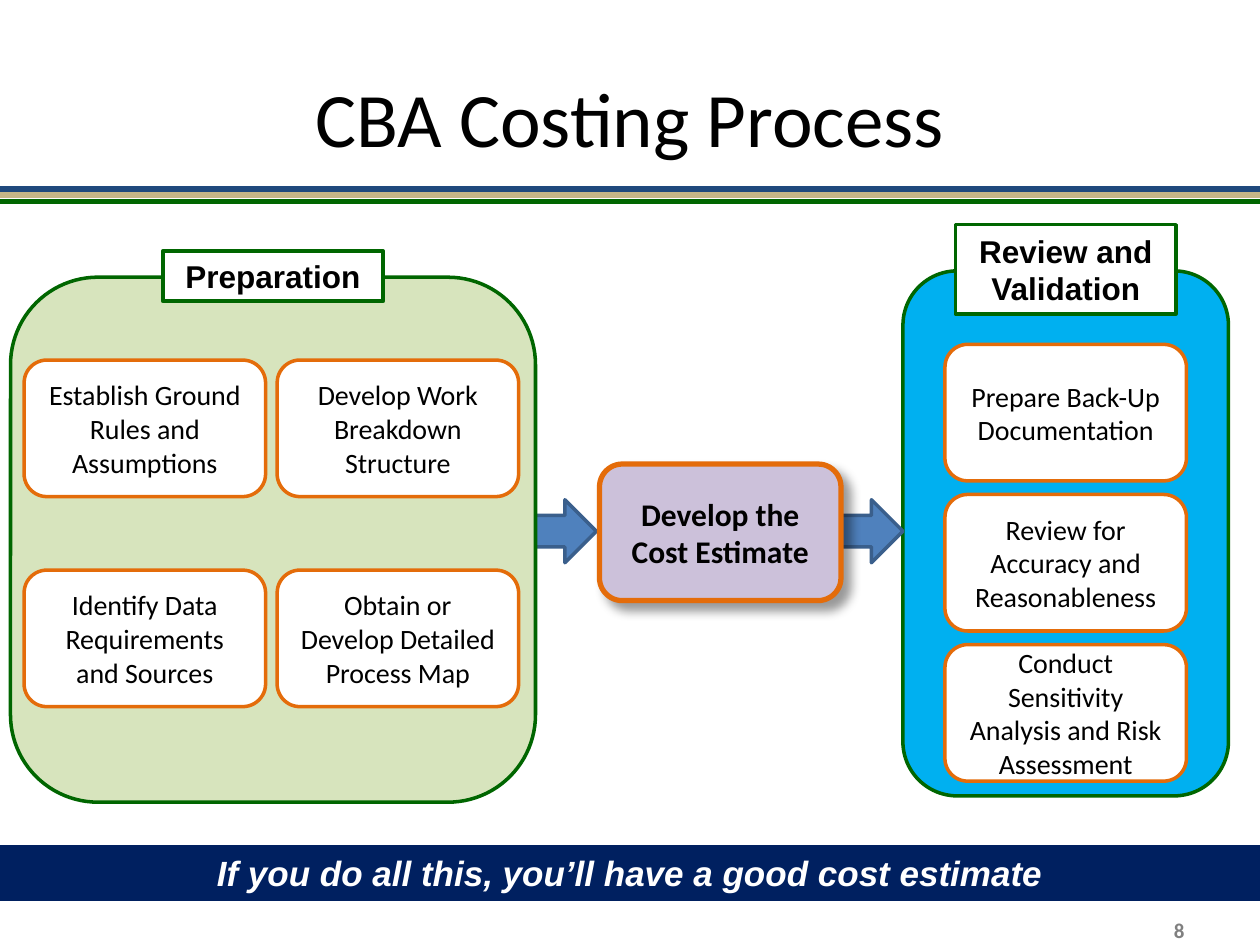
from dataclasses import dataclass

from lxml.etree import SubElement as Sub
from pptx import Presentation
from pptx.dml.color import RGBColor
from pptx.enum.shapes import MSO_CONNECTOR as Wire, MSO_SHAPE as Kind
from pptx.enum.text import MSO_ANCHOR as Anchor, PP_ALIGN as Align
from pptx.oxml.ns import qn
from pptx.util import Inches, Pt

# Grid of 120 columns by 90 rows on a 10 by 7.5 inch slide
WIDE, HIGH = Inches(10), Inches(7.5)
COLS, ROWS = 120, 90

BLACK, WHITE, GREY = "000000", "FFFFFF", "808080"
GREEN, TAN, BLUE, NAVY = "006600", "C6B687", "1F497D", "002060"
ORANGE = "E46C0A"


@dataclass
class Area:
    col: float
    row: float
    cols: float
    rows: float

    def place(self) -> tuple[int, int, int, int]:
        return (int(self.col * WIDE / COLS), int(self.row * HIGH / ROWS),
                int(self.cols * WIDE / COLS), int(self.rows * HIGH / ROWS))


@dataclass
class Font:
    name: str
    size: float
    color: str = BLACK
    bold: bool = False
    slant: bool = False


@dataclass
class Look:
    kind: Kind
    fill: str
    edge: str = ""
    width: float = 2


BODY = Font("Calibri", 16)
HEAD = Font("Arial", 18, bold=True)
STEP = Look(Kind.ROUNDED_RECTANGLE, WHITE, ORANGE)
LABEL = Look(Kind.RECTANGLE, WHITE, GREEN)
ARROW = Look(Kind.RIGHT_ARROW, "4F81BD", "3A5F8C")


def rgb(color: str) -> RGBColor:
    return RGBColor.from_string(color)


def write(shape, text: str, font: Font, align=Align.CENTER, anchor=Anchor.MIDDLE):
    frame = shape.text_frame
    frame.word_wrap = True
    frame.vertical_anchor = anchor
    para = frame.paragraphs[0]
    para.text = text
    para.alignment = align
    style = para.font
    style.name, style.size = font.name, Pt(font.size)
    style.bold, style.italic = font.bold, font.slant
    style.color.rgb = rgb(font.color)


def draw(slide, area: Area, look: Look):
    shape = slide.shapes.add_shape(look.kind, *area.place())
    shape.shadow.inherit = False
    shape.fill.solid()
    shape.fill.fore_color.rgb = rgb(look.fill)
    if look.edge:
        shape.line.color.rgb = rgb(look.edge)
        shape.line.width = Pt(look.width)
    else:
        shape.line.fill.background()
    return shape


def step(slide, col: float, row: float, text: str, look: Look = STEP, font: Font = BODY):
    shape = draw(slide, Area(col, row, 23, 13), look)
    write(shape, text, font)
    return shape


def note(slide, area: Area, text: str, font: Font, align=Align.CENTER) -> None:
    write(slide.shapes.add_textbox(*area.place()), text, font, align)


def rule(slide, row: float, color: str) -> None:
    y = int(row * HIGH / ROWS)
    line = slide.shapes.add_connector(Wire.STRAIGHT, 0, y, WIDE, y)
    line.line.color.rgb = rgb(color)
    line.line.width = Pt(3.25)
    Sub(line._element.spPr, qn("a:effectLst"))


def shade(shape) -> None:
    """Soft shadow to the lower right."""
    glow = shape._element.spPr.find(qn("a:effectLst"))
    cast = Sub(glow, qn("a:outerShdw"), blurRad=str(Pt(6)), dist=str(Pt(6)),
               dir=str(45 * 60000), algn="tl", rotWithShape="0")
    tint = Sub(cast, qn("a:srgbClr"), val=BLACK)
    Sub(tint, qn("a:alpha"), val="40000")


def main() -> None:
    deck = Presentation()
    deck.slide_width, deck.slide_height = WIDE, HIGH
    slide = deck.slides.add_slide(deck.slide_layouts[6])

    # Title, its three rules and the page number
    for i, color in enumerate((GREEN, TAN, BLUE)):
        rule(slide, 19.2 - 0.6 * i, color)
    note(slide, Area(6, 3.6, 108, 15), "CBA Costing Process", Font("Calibri", 44))
    note(slide, Area(86, 87.2, 28, 2.8), "8",
         Font("Calibri", 12, GREY, bold=True), Align.RIGHT)

    # Arrow and the two stage panels
    draw(slide, Area(43.8, 47.6, 13, 6), ARROW)
    draw(slide, Area(86, 25.8, 31, 50), Look(Kind.ROUNDED_RECTANGLE, "00B0F0", GREEN))
    draw(slide, Area(1, 26.4, 50, 50), Look(Kind.ROUNDED_RECTANGLE, "D7E4BD", GREEN))

    # Preparation: two by two steps
    prep = ("Establish Ground Rules and Assumptions", "Develop Work Breakdown Structure",
            "Identify Data Requirements and Sources", "Obtain or Develop Detailed Process Map")
    for i, text in enumerate(prep):
        step(slide, 2.3 + 24.1 * (i % 2), 34.3 + 20 * (i // 2), text)

    # Review: a column of three steps
    review = ("Prepare Back-Up Documentation", "Review for Accuracy and Reasonableness",
              "Conduct Sensitivity Analysis and Risk Assessment")
    for i, text in enumerate(review):
        step(slide, 90, 32.8 + 14.3 * i, text)

    # Stage labels
    for area, text in ((Area(15.5, 23.9, 21, 4.8), "Preparation"),
                       (Area(91, 21.4, 21, 8.5), "Review and Validation")):
        write(draw(slide, area, LABEL), text, HEAD)

    # Cost estimate in the middle
    draw(slide, Area(73, 47.6, 13, 6), ARROW)
    look = Look(Kind.ROUNDED_RECTANGLE, "CCC1DA", ORANGE, 3)
    shade(step(slide, 57.1, 44.2, "Develop the Cost Estimate", look,
               Font("Calibri", 18, bold=True)))

    # Closing banner
    banner = draw(slide, Area(0, 80.5, 120, 5.3), Look(Kind.RECTANGLE, NAVY))
    write(banner, "If you do all this, you’ll have a good cost estimate",
          Font("Arial", 20, WHITE, bold=True, slant=True), anchor=Anchor.TOP)

    deck.save("out.pptx")


if __name__ == "__main__":
    main()
